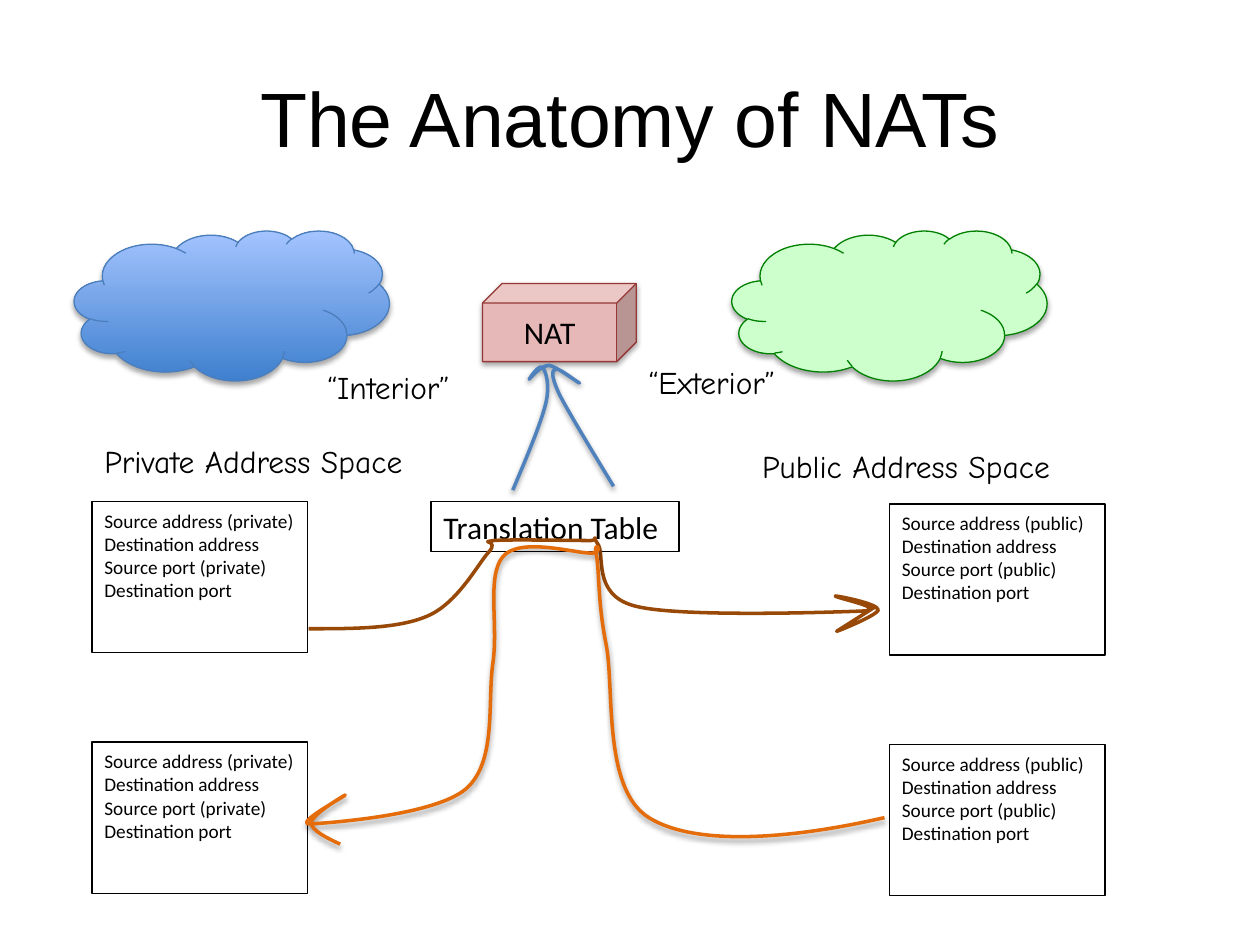
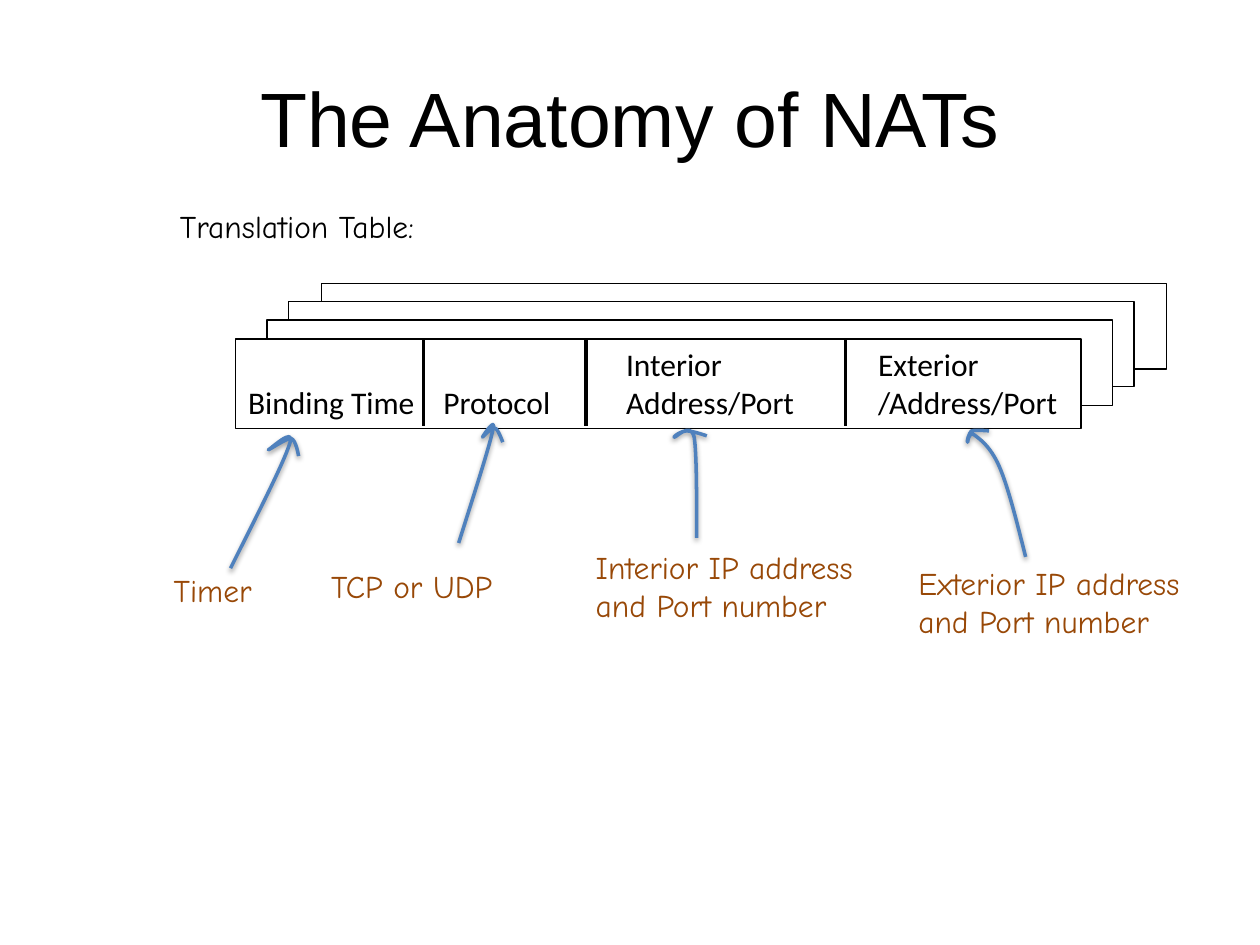
from lxml import etree
from pptx import Presentation
from pptx.dml.color import RGBColor
from pptx.enum.shapes import MSO_CONNECTOR, MSO_SHAPE
from pptx.enum.text import MSO_ANCHOR, MSO_AUTO_SIZE, PP_ALIGN
from pptx.oxml.ns import qn
from pptx.util import Pt

PX = 9144  # 100 px to the inch
RECT, CUBE, CLOUD = MSO_SHAPE.RECTANGLE, MSO_SHAPE.CUBE, MSO_SHAPE.CLOUD
STRAIGHT = MSO_CONNECTOR.STRAIGHT
LEFT, CENTER = PP_ALIGN.LEFT, PP_ALIGN.CENTER
TOP, MIDDLE = MSO_ANCHOR.TOP, MSO_ANCHOR.MIDDLE
NO_FIT, GROW = MSO_AUTO_SIZE.NONE, MSO_AUTO_SIZE.SHAPE_TO_FIT_TEXT

BLACK, WHITE = "000000", "FFFFFF"
BROWN, ORANGE, BLUE = "984807", "E46C0A", "4F81BD"
TITLE_FONT, BODY_FONT, NOTE_FONT = "Arial", "Calibri", "Comic Neue"
TITLE = "The Anatomy of NATs"

FITTED = {"word_wrap": False, "auto_size": GROW, "vertical_anchor": TOP}
CENTERED = {"word_wrap": True, "auto_size": NO_FIT, "vertical_anchor": MIDDLE}

# Each curve: start point, then (control, control, end) triples, in px from its corner.
OUTBOUND_PATH = [
    (0, 73), (35, 73), (71, 73), (94, 63), (118, 53), (134, 22), (143, 12),
    (152, 2), (134, 5), (147, 3), (160, 2), (207, 3), (220, 3),
    (234, 4), (223, -4), (229, 5), (236, 13), (224, 46), (259, 55),
    (293, 64), (412, 60), (438, 59), (465, 58), (416, 48), (418, 47),
    (420, 47), (452, 53), (452, 58), (452, 62), (420, 75), (419, 75),
    (419, 75), (449, 56), (449, 56)]
INBOUND_PATH = [
    (458, 215), (384, 232), (308, 238), (271, 215), (234, 192), (244, 112), (237, 77),
    (230, 42), (232, 17), (229, 5), (227, -7), (237, 6), (224, 5),
    (212, 5), (168, -8), (155, 8), (142, 24), (152, 63), (147, 94),
    (143, 125), (150, 171), (126, 192), (102, 213), (19, 219), (3, 220),
    (-13, 221), (30, 198), (30, 197), (30, 197), (4, 212), (3, 219),
    (3, 225), (15, 231), (26, 236)]
TABLE_TO_NAT = [
    (0, 99), (11, 73), (22, 47), (26, 31), (30, 15), (26, 5), (24, 2),
    (21, -2), (13, 11), (13, 11), (14, 10), (22, 0), (29, 0),
    (35, 1), (52, 14), (53, 14), (53, 15), (36, 1), (34, 3),
    (31, 4), (30, 8), (37, 23), (45, 39), (80, 96), (80, 96)]
TIMER_ARROW = [
    (0, 104), (21, 62), (42, 21), (47, 5), (52, -10), (30, 11), (30, 10),
    (31, 10), (44, 1), (48, 1), (52, 2), (54, 15), (54, 15)]
PROTOCOL_ARROW = [
    (0, 94), (12, 56), (24, 19), (27, 5), (31, -9), (18, 11), (19, 10),
    (19, 10), (26, 2), (29, 3), (31, 3), (35, 14), (35, 14)]
INTERIOR_ARROW = [
    (18, 85), (18, 52), (18, 18), (16, 5), (13, -8), (1, 6), (0, 5),
    (0, 4), (6, 0), (10, 0), (15, 0), (26, 4), (26, 4)]
EXTERIOR_ARROW = [
    (46, 100), (39, 72), (32, 44), (25, 28), (18, 12), (9, 6), (5, 3),
    (1, 0), (0, 9), (0, 9), (-1, 9), (1, 2), (3, 0), (6, -1), (17, 0), (17, 0)]


def rgb(hex_color):
    return RGBColor.from_string(hex_color)


def emu(box):
    return [length * PX for length in box]


def set_line(shape, color, width):
    shape.line.color.rgb = rgb(color)
    shape.line.width = Pt(width)


def add_shadow(shape, opacity, distance):
    effects = shape._element.spPr.find(qn("a:effectLst"))
    outer = etree.SubElement(effects, qn("a:outerShdw"), blurRad=str(Pt(3.1)),
                             dist=str(Pt(distance)), dir="5400000", rotWithShape="0")
    color = etree.SubElement(outer, qn("a:srgbClr"), val=BLACK)
    etree.SubElement(color, qn("a:alpha"), val=str(opacity * 1000))


def write(shape, lines, frame_format, size=18, font=BODY_FONT, color=BLACK, align=LEFT):
    frame = shape.text_frame
    frame.text = "\n".join(lines)
    for name, value in frame_format.items():
        setattr(frame, name, value)
    font_format = {"size": Pt(size), "name": font}
    for paragraph in frame.paragraphs:
        paragraph.alignment = align
        for run in paragraph.runs:
            for name, value in font_format.items():
                setattr(run.font, name, value)
            run.font.color.rgb = rgb(color)


def add_text(slide, box, lines, frame_format=FITTED, **style):
    write(slide.shapes.add_textbox(*emu(box)), lines, frame_format, **style)


def add_note(slide, box, *lines, color=BLACK):
    add_text(slide, box, lines, font=NOTE_FONT, color=color)


def add_outlined(slide, preset, box, fill=None, line=BLACK):
    shape = slide.shapes.add_shape(preset, *emu(box))
    shape.shadow.inherit = False
    if fill:
        shape.fill.solid()
        shape.fill.fore_color.rgb = rgb(fill)
    else:
        shape.fill.background()
    set_line(shape, line, 0.75)
    return shape


def add_curve(slide, left, top, points, color, shadow=True):
    """Draw an open Bézier curve from a start point and triples of points."""
    builder = slide.shapes.build_freeform(*points[0], scale=PX)
    builder.add_line_segments(points[1:], close=False)
    curve = builder.convert_to_shape(left * PX, top * PX)
    outline = curve._element.xpath(".//a:path")[0]
    segments = list(outline)[1:]
    for first in range(0, len(segments), 3):
        bezier = etree.SubElement(outline, qn("a:cubicBezTo"))
        for segment in segments[first:first + 3]:
            bezier.append(segment[0])
            outline.remove(segment)
    curve.fill.background()
    curve.shadow.inherit = False
    set_line(curve, color, 2)
    if shadow:
        add_shadow(curve, 38, 1.6)


def add_titled_slide(deck):
    slide = deck.slides.add_slide(deck.slide_layouts[6])
    add_text(slide, (50, 30, 900, 125), [TITLE], CENTERED,
             size=44, font=TITLE_FONT, align=CENTER)
    return slide


def add_networks(slide, left, top):
    """Place the NAT between the private and the public cloud."""
    nat = add_outlined(slide, CUBE, (left + 324, top + 42, 122, 62), "E6B9B8", "953735")
    write(nat, ["NAT"], CENTERED, align=CENTER)
    private = add_outlined(slide, CLOUD, (left, top, 250, 119), line="4B7EBC")
    private.fill.gradient()
    private.fill.gradient_angle = 90
    for stop, color in zip(private.fill.gradient_stops, ("3F80CE", "A4C4FF")):
        stop.color.rgb = rgb(color)
    public = add_outlined(slide, CLOUD, (left + 522, top, 250, 119), "CCFFCC", "008000")
    for shape in (nat, private, public):
        add_shadow(shape, 35, 1.8)
    add_note(slide, (left + 191, top + 104, 146, 40), "“Interior”")
    add_note(slide, (left + 446, top + 100, 159, 40), "“Exterior”")
    add_note(slide, (left + 536, top + 167, 291, 40), "Public Address Space")
    add_note(slide, (left + 14, top + 163, 309, 40), "Private Address Space")


def add_packet(slide, left, top, side, text_width, text_height):
    add_outlined(slide, RECT, (left, top, 171, 120))
    fields = [f"Source address ({side})", "Destination address",
              f"Source port ({side})", "Destination port"]
    add_text(slide, (left, top + 1, text_width, text_height), fields, size=11)


def add_packet_flows(slide, left, top):
    """Place the packets on both sides and their ways through the table."""
    table = add_outlined(slide, RECT, (left + 269, top, 197, 40))
    write(table, ["Translation Table"], FITTED)
    add_curve(slide, left + 172, top + 28, OUTBOUND_PATH, BROWN, shadow=False)
    for row_top in (top, top + 191):
        add_packet(slide, left, row_top, "private", 172, 84)
        add_packet(slide, left + 633, row_top + 2, "public", 166, 103)
    add_curve(slide, left + 171, top + 36, INBOUND_PATH, ORANGE)
    add_curve(slide, left + 334, top - 108, TABLE_TO_NAT, BLUE)


def add_record_stack(slide, left, top):
    """Place the front record, with its columns, over the records behind it."""
    for shift, rise in ((68, 44), (42, 30), (25, 15)):
        add_outlined(slide, RECT, (left + shift, top - rise, 671, 68), WHITE)
    record = add_outlined(slide, RECT, (left, top, 671, 71), WHITE)
    write(record, ["\t\tInterior\tExterior",
                   "Binding Time\tProtocol\tAddress/Port\t/Address/Port"], FITTED)
    for paragraph in record.text_frame.paragraphs:
        tabs = etree.SubElement(paragraph._p.get_or_add_pPr(), qn("a:tabLst"))
        for column in (155, 300, 500):
            etree.SubElement(tabs, qn("a:tab"), pos=str(column * PX), algn="l")
    for column in (149, 278, 484):
        x = left + column
        divider = slide.shapes.add_connector(STRAIGHT, *emu((x, top + 69, x, top + 1)))
        set_line(divider, BLACK, 2)
        etree.SubElement(divider._element.spPr, qn("a:effectLst"))


def add_column_notes(slide, left, top):
    """Explain each column of the record below it, with an arrow up to it."""
    notes = [((125, 108, 199, 40), ["TCP or UDP"]),
             ((0, 111, 101, 40), ["Timer"]),
             ((335, 93, 273, 71), ["Interior IP address", "and Port number"]),
             ((591, 106, 287, 71), ["Exterior IP address", "and Port number"])]
    for (x, y, width, height), lines in notes:
        add_note(slide, (left + x, top + y, width, height), *lines, color=BROWN)
    arrows = [(55, 10, TIMER_ARROW), (236, 0, PROTOCOL_ARROW),
              (407, 5, INTERIOR_ARROW), (640, 5, EXTERIOR_ARROW)]
    for x, y, points in arrows:
        add_curve(slide, left + x, top + y, points, BLUE)


def main():
    deck = Presentation()
    deck.slide_width, deck.slide_height = emu((1000, 750))

    overview = add_titled_slide(deck)
    add_networks(overview, 59, 183)
    add_packet_flows(overview, 73, 398)

    table_slide = add_titled_slide(deck)
    add_note(table_slide, (133, 159, 256, 40), "Translation Table:")
    add_record_stack(table_slide, 187, 269)
    add_column_notes(table_slide, 128, 337)

    deck.save("out.pptx")


if __name__ == "__main__":
    main()
